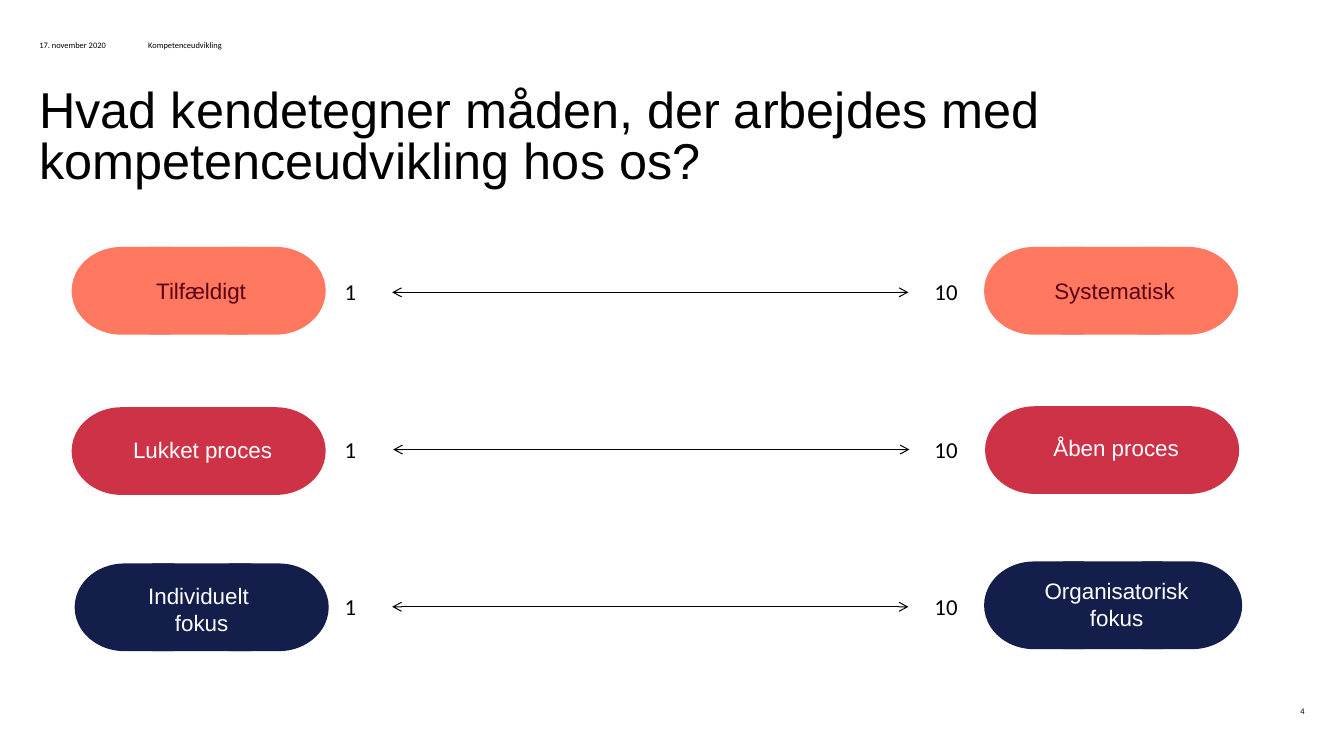
from dataclasses import dataclass

from lxml.etree import SubElement
from pptx import Presentation
from pptx.dml.color import RGBColor
from pptx.enum.shapes import MSO_CONNECTOR, MSO_SHAPE
from pptx.enum.text import MSO_ANCHOR, MSO_AUTO_SIZE, PP_ALIGN
from pptx.oxml.ns import qn
from pptx.slide import Slide
from pptx.text.text import TextFrame
from pptx.util import Inches, Pt

BLACK = RGBColor(0x00, 0x00, 0x00)
WHITE = RGBColor(0xFF, 0xFF, 0xFF)
CORAL = RGBColor(0xFF, 0x78, 0x5F)
WINE = RGBColor(0x5A, 0x00, 0x14)
RED = RGBColor(0xCD, 0x32, 0x46)
NAVY = RGBColor(0x14, 0x1E, 0x4B)

PART_W = 0.99
PILL_H = 0.87


@dataclass
class Pill:
    lines: list[str]
    left: float
    top: float
    text_left: float
    text_top: float
    text_w: float
    width: float = 2.52


@dataclass
class Scale:
    low: Pill
    high: Pill
    fill: RGBColor
    ink: RGBColor
    line_left: float


@dataclass
class Label:
    text: str
    left: float
    top: float
    width: float
    align: PP_ALIGN = PP_ALIGN.LEFT


SCALES = [
    Scale(Pill(["Tilfældigt"], 0.71, 2.45, 1.06, 2.45, 1.87),
          Pill(["Systematisk"], 9.76, 2.45, 10.12, 2.45, 1.87),
          CORAL, WINE, 3.89),
    Scale(Pill(["Lukket proces"], 0.71, 4.04, 0.96, 4.02, 2.1),
          Pill(["Åben proces"], 9.77, 4.03, 10.02, 4.01, 2.1),
          RED, WHITE, 3.9),
    Scale(Pill(["Individuelt ", "fokus"], 0.74, 5.59, 0.95, 5.61, 2.1),
          Pill(["Organisatorisk fokus"], 9.76, 5.57, 10.23, 5.56, 1.69, 2.56),
          NAVY, WHITE, 3.89),
]
LABELS = [
    Label("17. november 2020", 0.39, 0.39, 1.08),
    Label("Kompetenceudvikling", 1.47, 0.39, 1.76),
    Label("4", 12.56, 6.99, 0.38, PP_ALIGN.RIGHT),
]


def fill_text(frame: TextFrame, lines: list[str], size: float, font: str,
              color: RGBColor, align: PP_ALIGN = PP_ALIGN.LEFT) -> None:
    for i, line in enumerate(lines):
        para = frame.add_paragraph() if i else frame.paragraphs[0]
        para.alignment = align
        run = para.add_run()
        run.text = line
        run.font.size = Pt(size)
        run.font.name = font
        run.font.color.rgb = color


def clear_inset(frame: TextFrame) -> None:
    frame.margin_left = frame.margin_right = 0
    frame.margin_top = frame.margin_bottom = 0
    frame.word_wrap = True


def add_title(slide: Slide) -> None:
    title = slide.shapes.title
    title.left, title.top = Inches(0.39), Inches(0.88)
    title.width, title.height = Inches(12.55), Inches(1.4)
    frame = title.text_frame
    clear_inset(frame)
    frame.auto_size = MSO_AUTO_SIZE.NONE
    frame.vertical_anchor = MSO_ANCHOR.TOP
    fill_text(frame, ["Hvad kendetegner måden, der arbejdes med "
                      "kompetenceudvikling hos os?"], 36, "Arial", BLACK)
    frame.paragraphs[0].line_spacing = 0.83


def add_label(slide: Slide, label: Label) -> None:
    box = slide.shapes.add_textbox(Inches(label.left), Inches(label.top),
                                   Inches(label.width), Inches(0.12))
    clear_inset(box.text_frame)
    box.text_frame.vertical_anchor = MSO_ANCHOR.MIDDLE
    fill_text(box.text_frame, [label.text], 6, "Calibri", BLACK, label.align)


def add_pill(slide: Slide, pill: Pill, fill: RGBColor, ink: RGBColor) -> None:
    group = slide.shapes.add_group_shape()
    slack = pill.width - PART_W
    parts = [(MSO_SHAPE.FLOWCHART_DELAY, slack, 0),
             (MSO_SHAPE.FLOWCHART_DELAY, 0, 180),
             (MSO_SHAPE.RECTANGLE, slack / 2, 0)]
    for kind, shift, turn in parts:
        part = group.shapes.add_shape(
            kind, Inches(pill.left + shift), Inches(pill.top),
            Inches(PART_W), Inches(PILL_H))
        part.rotation = turn
        part.shadow.inherit = False
        part.fill.solid()
        part.fill.fore_color.rgb = fill
        part.line.fill.background()
    box = group.shapes.add_textbox(
        Inches(pill.text_left), Inches(pill.text_top),
        Inches(pill.text_w), Inches(PILL_H))
    clear_inset(box.text_frame)
    box.text_frame.vertical_anchor = MSO_ANCHOR.MIDDLE
    fill_text(box.text_frame, pill.lines, 16, "Arial", ink, PP_ALIGN.CENTER)


def add_arrow(slide: Slide, left: float, y: float) -> None:
    arrow = slide.shapes.add_connector(
        MSO_CONNECTOR.STRAIGHT, Inches(left), Inches(y),
        Inches(left + 5.12), Inches(y))
    arrow.line.color.rgb = BLACK
    arrow.line.width = Pt(0.75)
    props = arrow.line._get_or_add_ln()
    for end in ("a:headEnd", "a:tailEnd"):
        SubElement(props, qn(end), type="arrow")
    SubElement(arrow._element.spPr, qn("a:effectLst"))


def add_mark(slide: Slide, text: str, left: float, top: float,
             width: float) -> None:
    box = slide.shapes.add_textbox(Inches(left), Inches(top),
                                   Inches(width), Inches(0.38))
    box.text_frame.word_wrap = False
    box.text_frame.auto_size = MSO_AUTO_SIZE.SHAPE_TO_FIT_TEXT
    fill_text(box.text_frame, [text], 16.3, "Calibri", BLACK)


def main() -> None:
    deck = Presentation()
    deck.slide_width, deck.slide_height = Inches(13.33), Inches(7.5)
    slide = deck.slides.add_slide(deck.slide_layouts[5])
    add_title(slide)
    for row, scale in enumerate(SCALES):
        y = 2.9 + 1.56 * row
        add_arrow(slide, scale.line_left, y)
        add_mark(slide, "1", 3.32, y - 0.19, 0.34)
        add_mark(slide, "10", 9.17, y - 0.19, 0.47)
        for pill in (scale.low, scale.high):
            add_pill(slide, pill, scale.fill, scale.ink)
    for label in LABELS:
        add_label(slide, label)
    deck.save("out.pptx")


if __name__ == "__main__":
    main()
